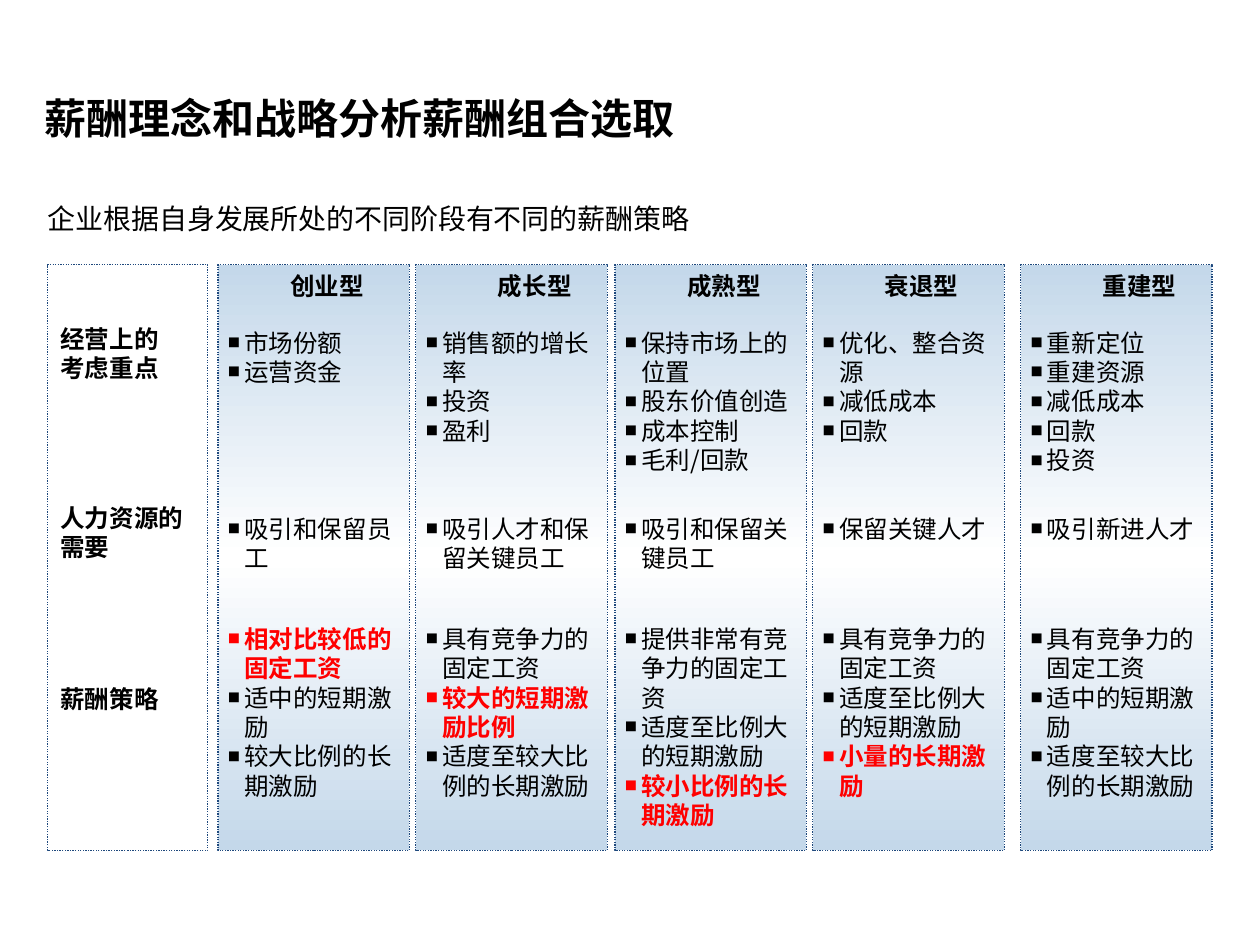
from copy import deepcopy

from lxml import etree
from pptx import Presentation
from pptx import util as u
from pptx.dml.color import RGBColor
from pptx.enum import dml, shapes, text
from pptx.oxml.ns import qn

FONT = "Noto Sans CJK SC"
BLACK = RGBColor(0, 0, 0)
RED = RGBColor(0xFF, 0, 0)
NAVY = RGBColor(0x1F, 0x49, 0x7D)
PALE_BLUE = RGBColor(0xC4, 0xD8, 0xEA)
WHITE = RGBColor(0xFF, 0xFF, 0xFF)

TITLE = "薪酬理念和战略分析薪酬组合选取"
SUBTITLE = "企业根据自身发展所处的不同阶段有不同的薪酬策略"

# label lines, label top, top of the bullet lists
ROWS = [
    (["经营上的", "考虑重点"], 2.57, 2.6),
    (["人力资源的需要"], 3.99, 4.08),
    (["薪酬策略"], 5.43, 4.95),
]
# Each stage has one bullet list per row; "emphasis" is shown in red.
STAGES = [
    dict(name="创业型", left=1.73, name_width=0.71, emphasis="相对比较低的固定工资", lists=[
        ["市场份额", "运营资金"],
        ["吸引和保留员工"],
        ["相对比较低的固定工资", "适中的短期激励", "较大比例的长期激励"]]),
    dict(name="成长型", left=3.3, name_width=0.87, emphasis="较大的短期激励比例", lists=[
        ["销售额的增长率", "投资", "盈利"],
        ["吸引人才和保留关键员工"],
        ["具有竞争力的固定工资", "较大的短期激励比例", "适度至较大比例的长期激励"]]),
    dict(name="成熟型", left=4.88, name_width=0.71, emphasis="较小比例的长期激励", lists=[
        ["保持市场上的位置", "股东价值创造", "成本控制", "毛利/回款"],
        ["吸引和保留关键员工"],
        ["提供非常有竞争力的固定工资", "适度至比例大的短期激励", "较小比例的长期激励"]]),
    dict(name="衰退型", left=6.45, name_width=0.71, emphasis="小量的长期激励", lists=[
        ["优化、整合资源", "减低成本", "回款"],
        ["保留关键人才"],
        ["具有竞争力的固定工资", "适度至比例大的短期激励", "小量的长期激励"]]),
    dict(name="重建型", left=8.1, name_width=0.87, emphasis=None, lists=[
        ["重新定位", "重建资源", "减低成本", "回款", "投资"],
        ["吸引新进人才"],
        ["具有竞争力的固定工资", "适中的短期激励", "适度至较大比例的长期激励"]]),
]

PANEL_TOP, PANEL_HEIGHT, PANEL_WIDTH = 2.1, 4.65, 1.52
LABEL_LEFT, LABEL_WIDTH = 0.38, 1.27
LINE_HEIGHT = 0.24
BULLET_INDENT = 0.13


def add_panel(slide, left, width, shaded):
    panel = slide.shapes.add_shape(
        shapes.MSO_SHAPE.RECTANGLE,
        *map(u.Inches, (left, PANEL_TOP, width, PANEL_HEIGHT)))
    panel.shadow.inherit = False
    panel.line.color.rgb = NAVY
    panel.line.width = u.Pt(0.75)
    panel.line.dash_style = dml.MSO_LINE.ROUND_DOT
    if not shaded:
        panel.fill.background()
        return
    panel.fill.gradient()
    panel.fill.gradient_angle = 90
    stop_list = panel.fill._fill._gradFill.find(qn("a:gsLst"))
    stop_list.append(deepcopy(stop_list[0]))
    stops = zip(panel.fill.gradient_stops, (0, 0.5, 1), (PALE_BLUE, WHITE, PALE_BLUE))
    for stop, position, color in stops:
        stop.position = position
        stop.color.rgb = color


def add_bullet(paragraph):
    properties = paragraph._p.get_or_add_pPr()
    indent = u.Inches(BULLET_INDENT)
    properties.set("marL", str(indent))
    properties.set("indent", str(-indent))
    for tag, name, value in (("a:buSzPct", "val", "50000"),
                             ("a:buFont", "typeface", FONT),
                             ("a:buChar", "char", "■")):
        etree.SubElement(properties, qn(tag)).set(name, value)


def add_text(slide, box, lines, size=14, bold=False, bullets=False, emphasis=None,
             inset=0, **paragraph_format):
    frame = slide.shapes.add_textbox(*map(u.Inches, box)).text_frame
    frame.word_wrap = True
    for side in ("left", "top", "right", "bottom"):
        setattr(frame, f"margin_{side}", u.Inches(inset))
    for index, line in enumerate(lines):
        paragraph = frame.paragraphs[0] if index == 0 else frame.add_paragraph()
        for name, value in paragraph_format.items():
            setattr(paragraph, name, value)
        if bullets:
            add_bullet(paragraph)
        run = paragraph.add_run()
        run.text = line
        stressed = line == emphasis
        for name, value in dict(name=FONT, size=u.Pt(size), bold=bold or stressed).items():
            setattr(run.font, name, value)
        run.font.color.rgb = RED if stressed else BLACK
        etree.SubElement(run._r.get_or_add_rPr(), qn("a:ea")).set("typeface", FONT)
    return frame


def main():
    presentation = Presentation()
    presentation.slide_width, presentation.slide_height = u.Inches(10), u.Inches(7.5)
    slide = presentation.slides.add_slide(presentation.slide_layouts[6])

    title = add_text(slide, (0.35, 0.6, 7.24, 0.66), [TITLE], size=24, bold=True,
                     line_spacing=u.Pt(30))
    title.vertical_anchor = text.MSO_ANCHOR.MIDDLE
    add_text(slide, (0.28, 1.5, 7.01, 0.52), [SUBTITLE], size=16, inset=0.1)

    add_panel(slide, LABEL_LEFT, LABEL_WIDTH, shaded=False)
    for label, top, _ in ROWS:
        add_text(slide, (LABEL_LEFT + 0.1, top, 1.08, 2 * LINE_HEIGHT), label, bold=True)

    for stage in STAGES:
        left = stage["left"]
        add_panel(slide, left, PANEL_WIDTH, shaded=True)
        add_text(slide, (left + 0.51, PANEL_TOP + 0.05, stage["name_width"], LINE_HEIGHT),
                 [stage["name"]], bold=True, alignment=text.PP_ALIGN.CENTER)
        for (_, _, top), items in zip(ROWS, stage["lists"]):
            add_text(slide, (left + 0.08, top, 1.36, LINE_HEIGHT * len(items)), items,
                     bullets=True, emphasis=stage["emphasis"])

    presentation.save("out.pptx")


if __name__ == "__main__":
    main()
